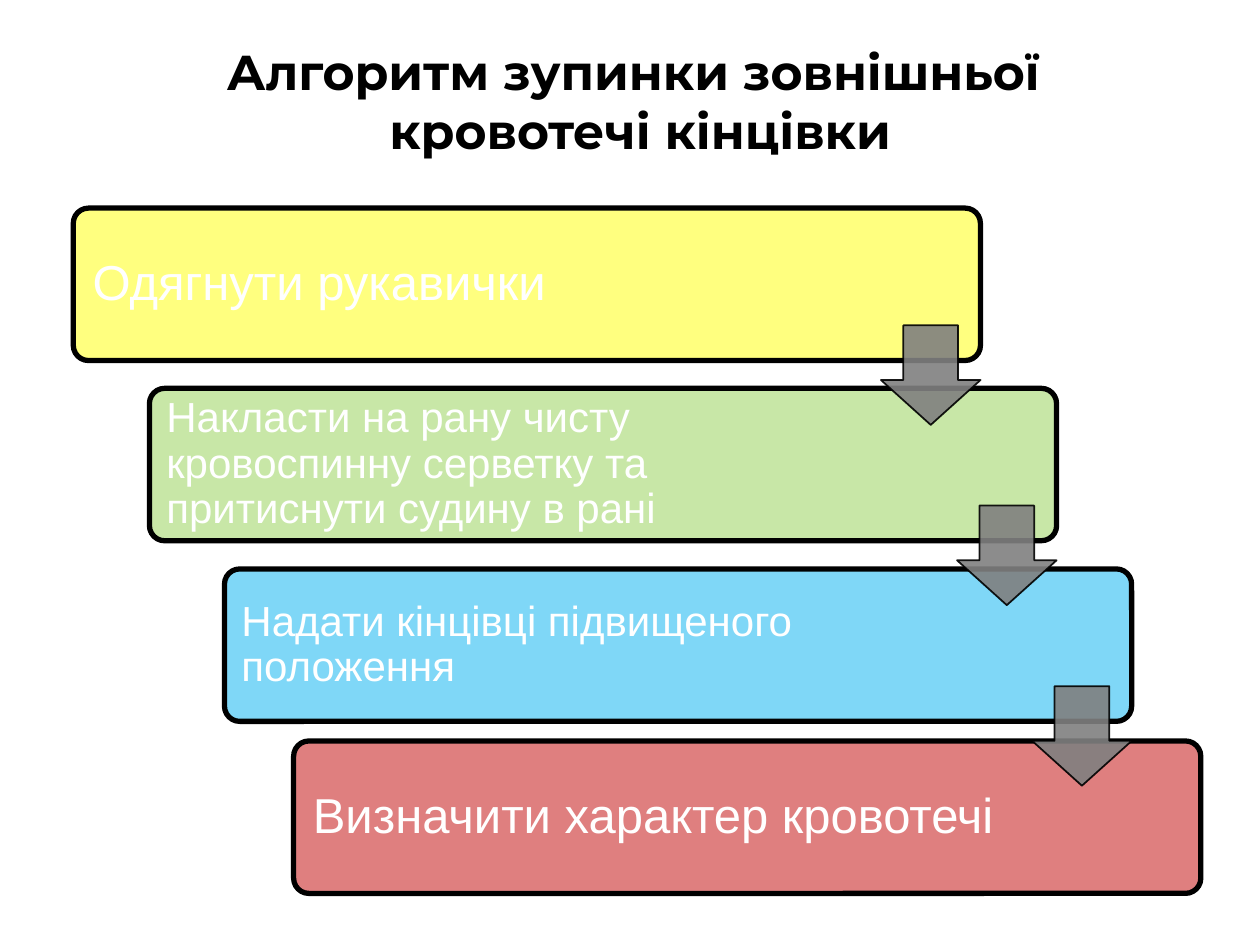
from lxml import etree
from pptx import Presentation
from pptx.dml.color import RGBColor
from pptx.enum.shapes import MSO_SHAPE
from pptx.enum.text import MSO_ANCHOR, PP_ALIGN
from pptx.oxml.ns import qn
from pptx.util import Pt

ROUNDED = MSO_SHAPE.ROUNDED_RECTANGLE
DOWN_ARROW = MSO_SHAPE.DOWN_ARROW
MIDDLE = MSO_ANCHOR.MIDDLE
CENTER = PP_ALIGN.CENTER

BLACK = RGBColor(0x00, 0x00, 0x00)
WHITE = RGBColor(0xFF, 0xFF, 0xFF)
GRAY = RGBColor(0x80, 0x80, 0x80)
YELLOW = RGBColor(0xFF, 0xFF, 0x00)
GREEN = RGBColor(0x92, 0xD0, 0x50)
BLUE = RGBColor(0x00, 0xB0, 0xF0)
RED = RGBColor(0xC0, 0x00, 0x00)

STEP_WIDTH, STEP_HEIGHT = 518.4, 87.1
ARROW_SIZE = 56.9


def add_block(kind, left, top, width, height, color, opacity, line_width, line_opacity):
    block = page.shapes.add_shape(kind, Pt(left), Pt(top), Pt(width), Pt(height))
    block.shadow.inherit = False
    block.fill.solid()
    block.fill.fore_color.rgb = color
    block.line.color.rgb = BLACK
    block.line.width = Pt(line_width)
    colors = block._element.spPr.iter(qn("a:srgbClr"))
    for element, percent in zip(list(colors), (opacity, line_opacity)):
        if percent < 100:
            etree.SubElement(element, qn("a:alpha")).set("val", str(percent * 1000))
    return block


def add_text(box, lines, para_format, font_format):
    frame = box.text_frame
    for index, line in enumerate(lines):
        para = frame.paragraphs[0] if index == 0 else frame.add_paragraph()
        for name, value in para_format.items():
            setattr(para, name, value)
        span = para.add_run()
        span.text = line
        for name, value in font_format.items():
            setattr(span.font, name, value)
        span.font.color.rgb = font_color


deck = Presentation()
deck.slide_width, deck.slide_height = Pt(720), Pt(540)
page = deck.slides.add_slide(deck.slide_layouts[6])

# Title
title = page.shapes.add_textbox(Pt(112.3), Pt(20.2), Pt(506.9), Pt(74.9))
title.text_frame.word_wrap = False
font_color = BLACK
add_text(
    title,
    ["Алгоритм зупинки зовнішньої ", "кровотечі кінцівки"],
    {"alignment": CENTER},
    {"name": "Montserrat", "size": Pt(28), "bold": True},
)

# Staircase of steps: left, top, colour, font size, inset, wording
steps = [
    (41.9, 118.9, YELLOW, 28, 8.4, "Одягнути рукавички"),
    (85.4, 221.9, GREEN, 24, 7.2,
     "Накласти на рану чисту кровоспинну серветку та притиснути судину в рані"),
    (128.3, 325.1, BLUE, 24, 7.2, "Надати кінцівці підвищеного положення"),
    (167.8, 423.4, RED, 28, 8.4, "Визначити характер кровотечі"),
]
font_color = WHITE
for left, top, color, size, inset, wording in steps:
    add_block(ROUNDED, left, top, STEP_WIDTH, STEP_HEIGHT, color, 50, 3, 100).adjustments[0] = 0.1
    label = page.shapes.add_textbox(Pt(left + 2.6), Pt(top + 2.6), Pt(414), Pt(82))
    frame_format = {"word_wrap": True, "vertical_anchor": MIDDLE}
    for side in ("left", "top", "right", "bottom"):
        frame_format["margin_" + side] = Pt(inset)
    for name, value in frame_format.items():
        setattr(label.text_frame, name, value)
    add_text(label, [wording], {"line_spacing": 0.9}, {"name": "Arial", "size": Pt(size)})

# Arrows at the lower right corner of every step but the last
for left, top, *_ in steps[:-1]:
    arrow = add_block(
        DOWN_ARROW, left + STEP_WIDTH - ARROW_SIZE, top + 67,
        ARROW_SIZE, ARROW_SIZE, GRAY, 90, 1, 90,
    )
    arrow.adjustments[0] = 0.55
    arrow.adjustments[1] = 0.45

deck.save("out.pptx")
